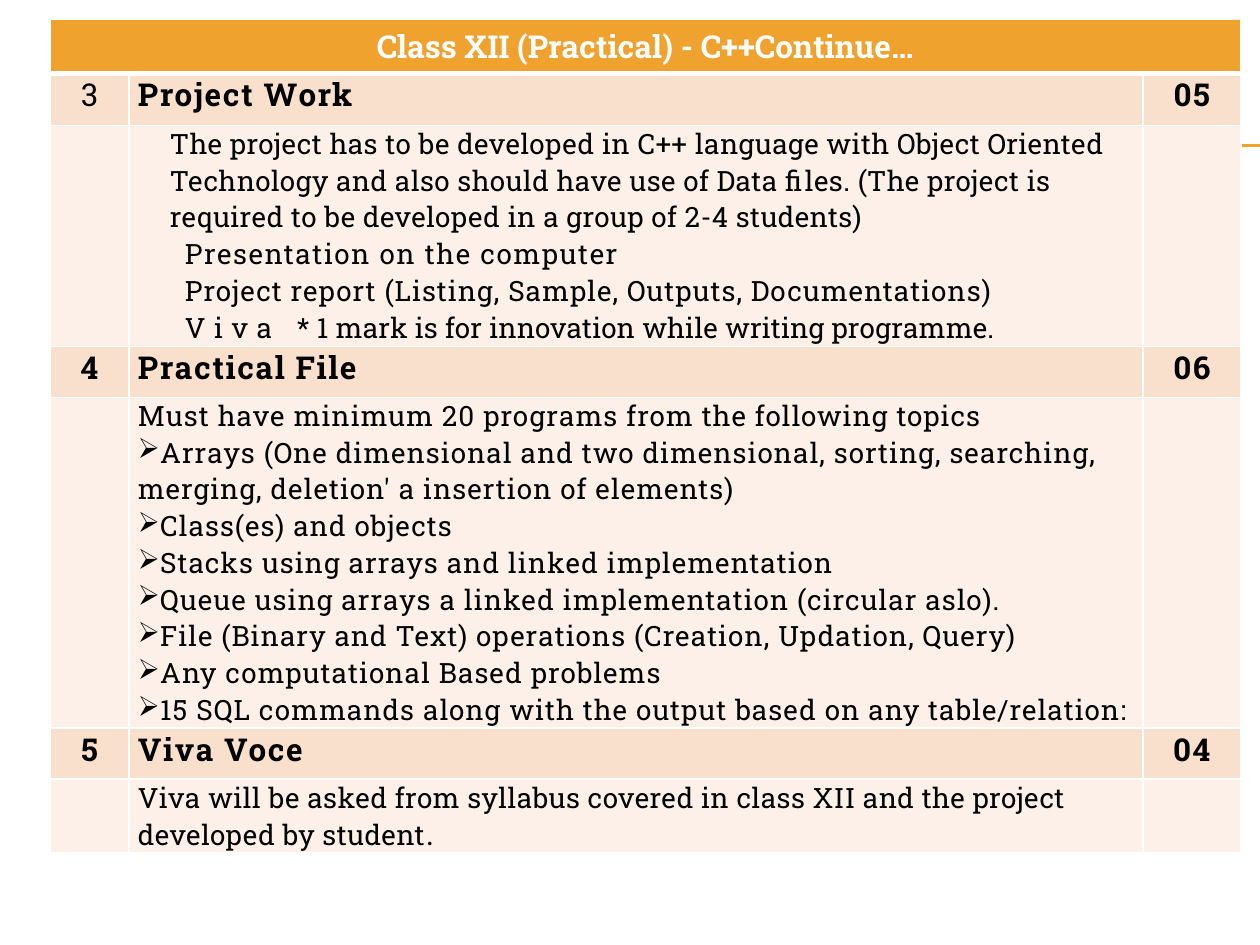
"""Build the practical marks slide as one table over a thin double rule."""
from lxml import etree
from pptx import Presentation
from pptx.dml.color import RGBColor
from pptx.enum.shapes import MSO_CONNECTOR
from pptx.enum.text import PP_ALIGN
from pptx.oxml.ns import qn
from pptx.util import Pt

STRAIGHT = MSO_CONNECTOR.STRAIGHT
LEFT, CENTER = PP_ALIGN.LEFT, PP_ALIGN.CENTER
GOLD = RGBColor(0xF0, 0xA2, 0x2E)
PEACH = RGBColor(0xF9, 0xE0, 0xCD)
CREAM = RGBColor(0xFC, 0xF0, 0xE8)
WHITE = RGBColor(0xFF, 0xFF, 0xFF)
BLACK = RGBColor(0, 0, 0)
CLOCK, ARROW = "·", "Ø"

COLS = [79, 1014, 98]
ROWS = [53, 52, 221, 51, 331, 51, 73]
TITLE = "Class XII (Practical) - C++Continue…"
PROJECT = ("The project has to be developed in C++ language with Object Oriented "
           "Technology and also should have use of Data files. (The project is "
           "required to be developed in a group of 2-4 students)")
TOPICS = [
    "Arrays (One dimensional and two dimensional, sorting, searching, "
    "merging, deletion' a insertion of elements)",
    "Class(es) and objects",
    "Stacks using arrays and linked implementation",
    "Queue using arrays a linked implementation (circular aslo).",
    "File (Binary and Text) operations (Creation, Updation, Query)",
    "Any computational Based problems",
    "15 SQL commands along with the output based on any table/relation:",
]
VIVA = "Viva will be asked from syllabus covered in class XII and the project developed by student"


class Deck:
    """Holds the style and the current slide."""

    font = "Roboto Slab"
    marks = "Wingdings"
    scale = 914400 / 126

    def __init__(self, width, height):
        self.prs = Presentation()
        self.prs.slide_width, self.prs.slide_height = self.px(width), self.px(height)
        self.slide = self.prs.slides.add_slide(self.prs.slide_layouts[6])

    def px(self, size):
        return round(size * self.scale)

    def rule(self, left, right, top):
        line = self.slide.shapes.add_connector(
            STRAIGHT, *map(self.px, (left, top, right, top)))
        line.line.color.rgb = GOLD
        line.line.width = Pt(0.75)
        etree.SubElement(line._element.spPr, qn("a:effectLst"))

    def table(self, left, top, cols, rows):
        frame = self.slide.shapes.add_table(
            len(rows), len(cols), *map(self.px, (left, top, sum(cols), sum(rows))))
        table = frame.table
        table.first_row = table.horz_banding = False
        for col, width in zip(table.columns, cols):
            col.width = self.px(width)
        for row, height in zip(table.rows, rows):
            row.height = self.px(height)
        return table

    def cell(self, cell, fill, above=1, below=1):
        props = cell._tc.get_or_add_tcPr()
        for side, width in zip("LRTB", (1, 1, above, below)):
            edge = etree.SubElement(props, qn(f"a:ln{side}"), w=str(Pt(width)))
            paint = etree.SubElement(edge, qn("a:solidFill"))
            etree.SubElement(paint, qn("a:srgbClr"), val=str(WHITE))
        cell.fill.solid()
        cell.fill.fore_color.rgb = fill

    def inset(self, cell):
        cell.margin_left = cell.margin_right = self.px(9)
        cell.margin_top = cell.margin_bottom = 0

    def style(self, run, size, gap=0, bold=False, color=BLACK, font=None):
        run.font.name = font or self.font
        run.font.size = Pt(size)
        run.font.bold = bold
        run.font.color.rgb = color
        run.font._element.set("spc", str(round(gap * 100)))

    def label(self, cell, text, align=LEFT, gap=0.9, bold=True, color=BLACK):
        cell.text_frame.text = text
        para = cell.text_frame.paragraphs[0]
        para.alignment = align
        self.style(para.runs[0], 18, gap, bold, color)

    def bullet(self, props, mark):
        tint = etree.SubElement(props, qn("a:buClr"))
        etree.SubElement(tint, qn("a:srgbClr"), val=str(BLACK))
        etree.SubElement(props, qn("a:buFont"), typeface=self.marks,
                         pitchFamily="2", charset="2")
        etree.SubElement(props, qn("a:buChar"), char=mark)

    def body(self, cell, items):
        frame = cell.text_frame
        for num, (text, gap, mark, left, hang) in enumerate(items):
            para = frame.add_paragraph() if num else frame.paragraphs[0]
            para.text = text
            self.style(para.runs[0], 16, gap)
            props = para._p.get_or_add_pPr()
            props.set("marL", str(self.px(left)))
            props.set("indent", str(self.px(-hang)))
            if mark:
                self.bullet(props, mark)

    def extra(self, para, text, size, gap, font=None):
        run = para.add_run()
        run.text = text
        self.style(run, size, gap, font=font)


def main():
    deck = Deck(1260, 945)
    for top in (145, 146):
        deck.rule(71, 1260, top)

    table = deck.table(50, 19, COLS, ROWS)
    for row in range(len(ROWS)):
        fill = GOLD if row == 0 else PEACH if row % 2 else CREAM
        for col in range(len(COLS)):
            cell = table.cell(row, col)
            deck.cell(cell, fill, 3 if row == 1 else 1, 3 if row == 0 else 1)
            if row:
                deck.inset(cell)
    head = table.cell(0, 0)
    head.merge(table.cell(0, 2))
    deck.label(head, TITLE, CENTER, 0, color=WHITE)

    parts = [("3", "Project Work", "05"), ("4", "Practical File", "06"),
             ("5", "Viva Voce", "04")]
    for row, (num, name, marks) in zip((1, 3, 5), parts):
        first = row == 1
        deck.label(table.cell(row, 0), num, CENTER, -0.4 if first else 0.9, not first)
        deck.label(table.cell(row, 1), name)
        deck.label(table.cell(row, 2), marks, CENTER)

    work, file, viva = (table.cell(row, 1) for row in (2, 4, 6))
    deck.body(work, [
        (PROJECT, 0.25, None, 32, 0),
        ("Presentation on the computer", 0.9, CLOCK, 47, 47),
        ("Project report (Listing, Sample, Outputs, Documentations)", 0.6, CLOCK, 47, 47),
        ("Viva ", 5, CLOCK, 47, 47),
    ])
    deck.extra(work.text_frame.paragraphs[-1],
               "* 1 mark is for innovation while writing programme.", 16, 0.1)
    deck.body(file, [
        ("Must have minimum 20 programs from the following topics", 0.6, None, 0, 0),
        *((topic, 0.6, ARROW, 0, 0) for topic in TOPICS),
    ])
    deck.body(viva, [(VIVA, 0.25, None, 0, 0)])
    deck.extra(viva.text_frame.paragraphs[0], ".", 18, 0, "Roboto")
    deck.prs.save("out.pptx")


if __name__ == "__main__":
    main()
